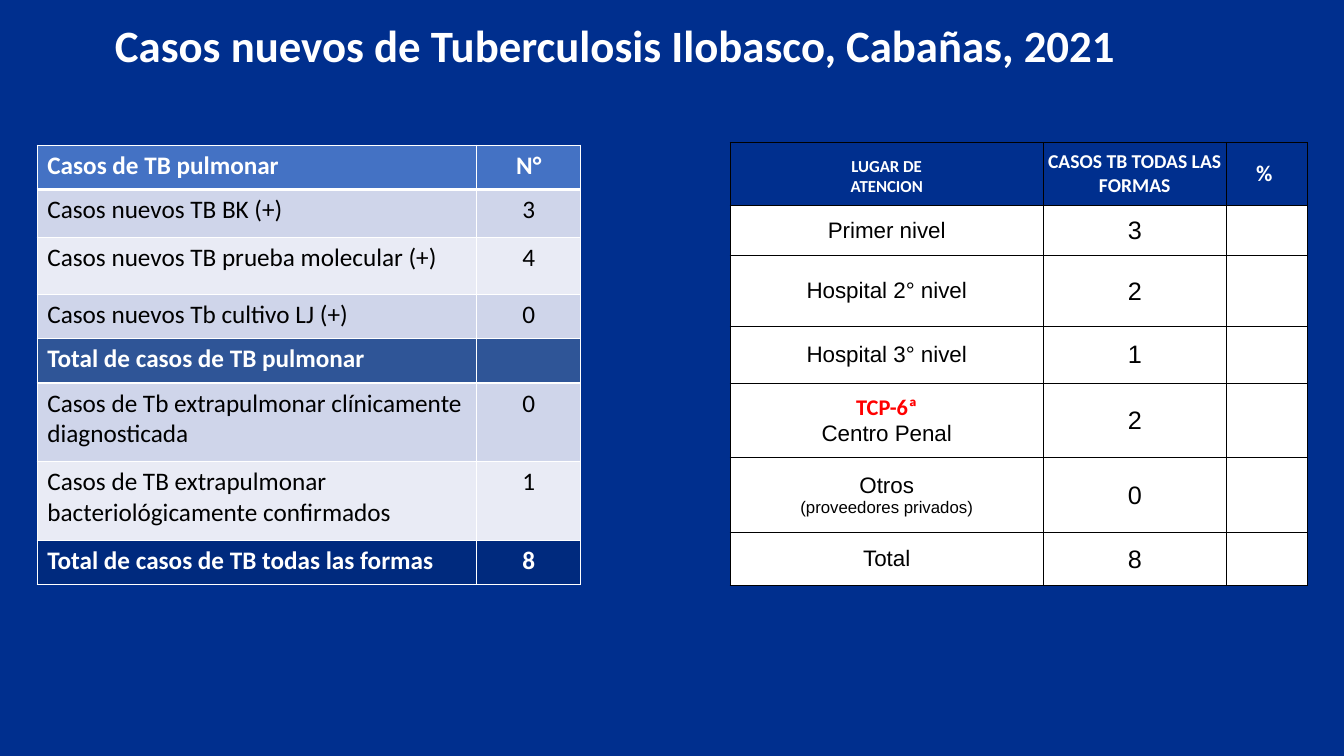
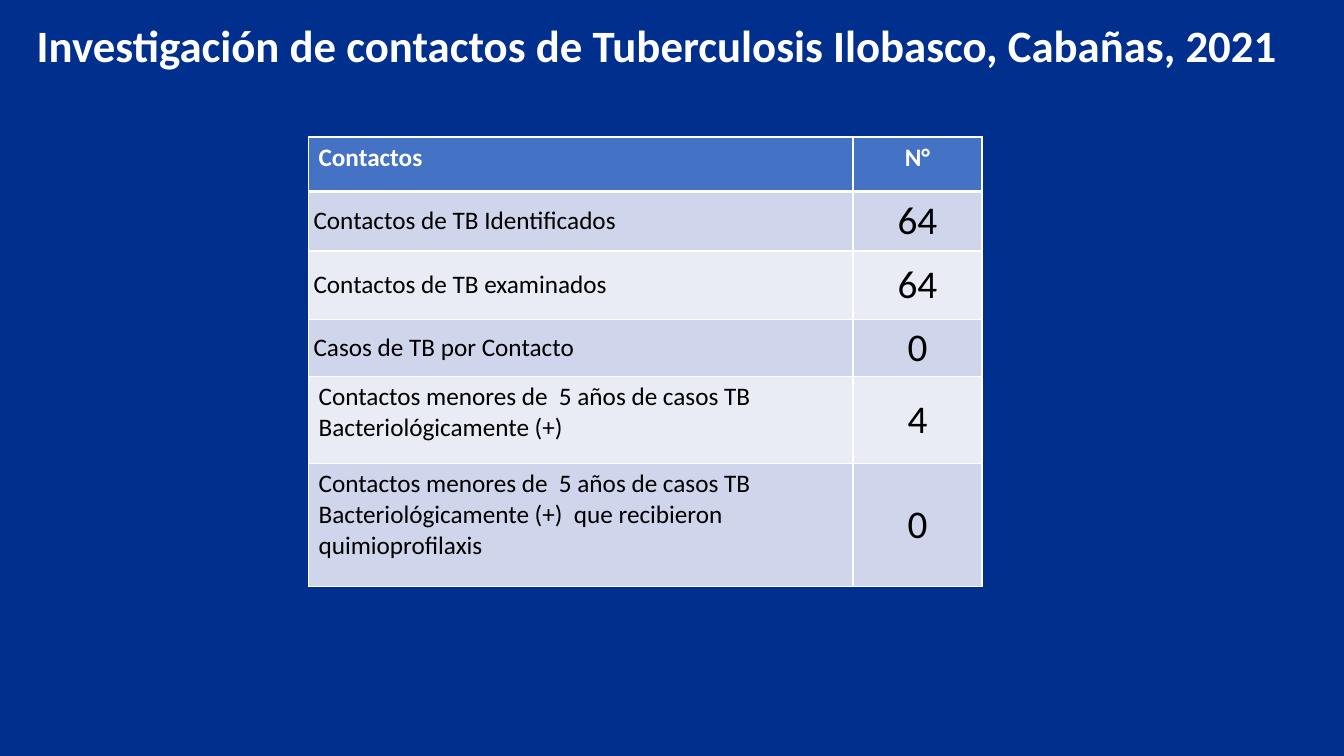
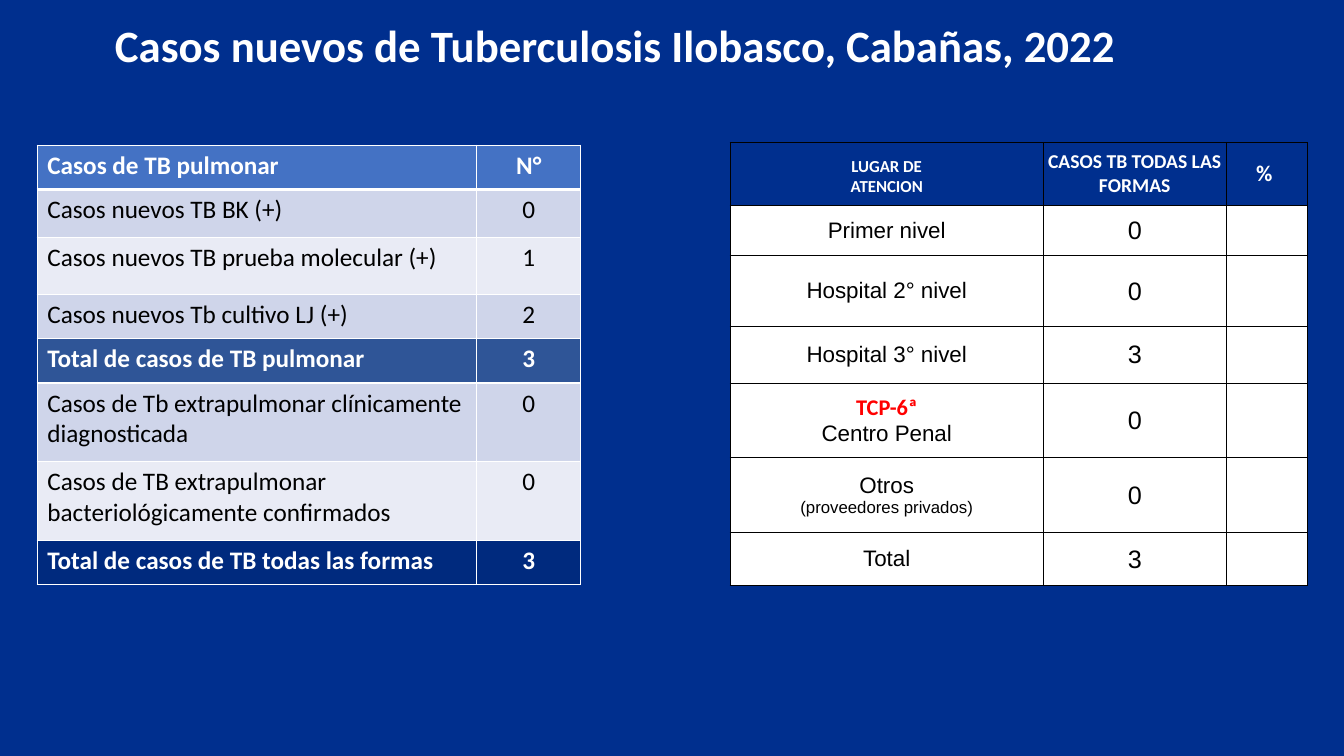
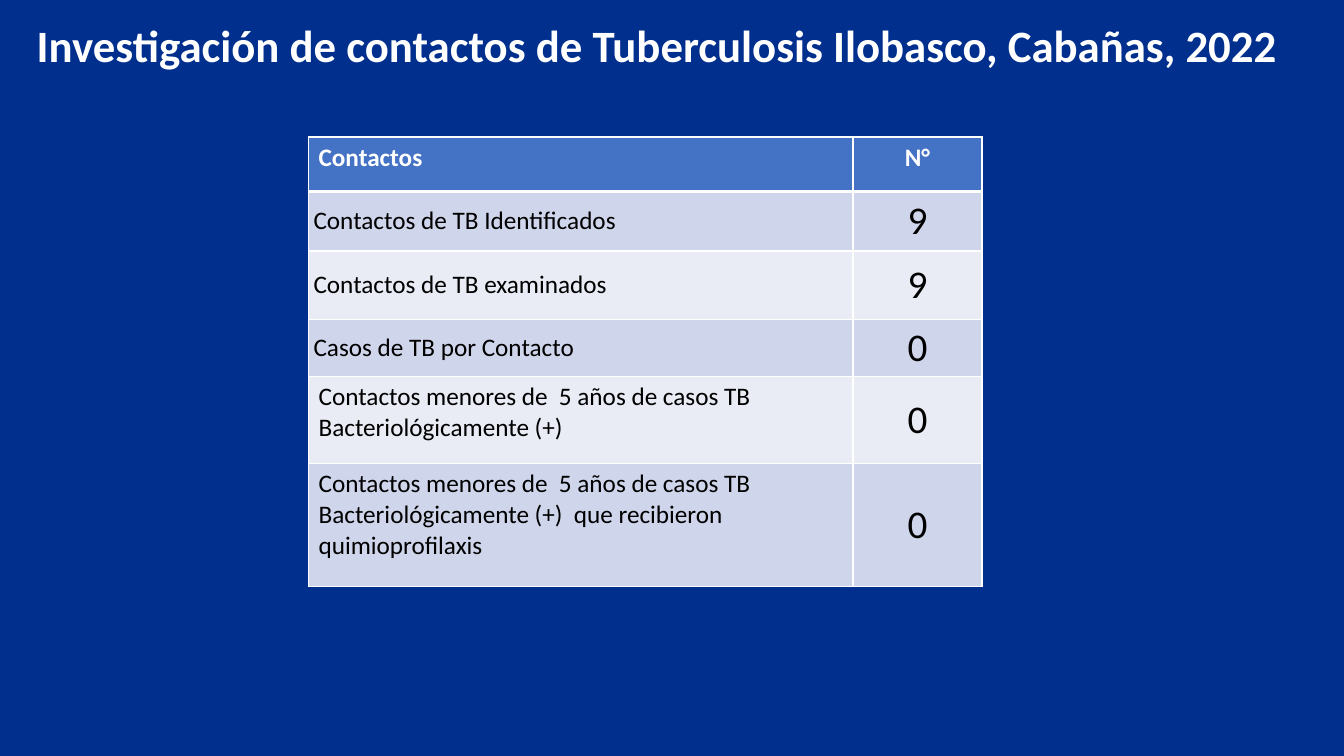
import dataclasses

import lxml.etree
import pptx
import pptx.dml.color
import pptx.enum.text
import pptx.oxml.ns
import pptx.util

Inches = pptx.util.Inches
Pt = pptx.util.Pt
ALIGN = pptx.enum.text.PP_ALIGN
ANCHOR = pptx.enum.text.MSO_ANCHOR


@dataclasses.dataclass(frozen=True)
class Theme:
    """Colours, fonts and type sizes of the whole deck."""
    navy: str = "002F8E"
    deep_navy: str = "002A7E"
    steel: str = "2F5597"
    header: str = "4472C4"
    band_dark: str = "CFD5EA"
    band_light: str = "E9EBF5"
    white: str = "FFFFFF"
    black: str = "000000"
    red: str = "FF0000"
    font: str = "Calibri"
    place_font: str = "Arial"
    title: int = 32
    figure: int = 28
    body: int = 18
    place: int = 16
    column_head: int = 14
    small: int = 12


THEME = Theme()


@dataclasses.dataclass(frozen=True)
class Style:
    """Look of a line of text."""
    size: int = THEME.body
    color: str = THEME.black
    bold: bool = False
    font: str = THEME.font


@dataclasses.dataclass(frozen=True)
class Cell:
    """Content of a table cell: one (text, style) pair per paragraph."""
    lines: tuple
    fill: str
    align: ALIGN = ALIGN.CENTER
    anchor: ANCHOR = ANCHOR.MIDDLE
    margins: tuple = (0.1, 0.05, 0.1, 0.05)


BODY = Style()
STRONG = Style(color=THEME.white, bold=True)
TIGHT = (0, 0, 0, 0)


def rgb(color):
    return pptx.dml.color.RGBColor.from_string(color)


class Report:
    """Holds the deck, its theme and the current page."""

    def __init__(self, theme):
        self.theme = theme
        self.deck = pptx.Presentation()
        self.deck.slide_width = Inches(13.33)
        self.deck.slide_height = Inches(7.5)
        background = self.deck.slide_master.background.fill
        background.solid()
        background.fore_color.rgb = rgb(theme.navy)
        self.page = None

    def add_page(self, title, left, width):
        self.page = self.deck.slides.add_slide(self.deck.slide_layouts[6])
        box = self.page.shapes.add_textbox(
            Inches(left), Inches(0.13), Inches(width), Inches(0.64))
        box.text_frame.word_wrap = True
        style = Style(self.theme.title, self.theme.white, True)
        self.set_lines(box.text_frame, [(title, style)], ALIGN.CENTER)

    def set_lines(self, frame, lines, align):
        frame.text = "\n".join(text for text, _ in lines)
        for para, (_, style) in zip(frame.paragraphs, lines):
            para.alignment = align
            for span in para.runs:
                span.font.name = style.font
                span.font.size = Pt(style.size)
                span.font.bold = style.bold
                span.font.color.rgb = rgb(style.color)

    def add_table(self, left, top, widths, heights, rows, line, line_width,
                  head_line_width):
        table = self.page.shapes.add_table(
            len(heights), len(widths), Inches(left), Inches(top),
            Inches(sum(widths)), Inches(sum(heights))).table
        table.first_row = table.horz_banding = False
        for column, width in zip(table.columns, widths):
            column.width = Inches(width)
        for index, (height, row) in enumerate(zip(heights, rows)):
            table.rows[index].height = Inches(height)
            # The rule under the heading is shared by the first two rows
            edges = {side: line_width for side in "LRTB"}
            if index < 2:
                edges["BT"[index]] = head_line_width
            for target, cell in zip(table.rows[index].cells, row):
                self.fill_cell(target, cell)
                self.draw_borders(target, line, edges)

    def fill_cell(self, target, cell):
        target.fill.solid()
        target.fill.fore_color.rgb = rgb(cell.fill)
        target.vertical_anchor = cell.anchor
        (target.margin_left, target.margin_top,
         target.margin_right, target.margin_bottom) = map(Inches, cell.margins)
        self.set_lines(target.text_frame, cell.lines, cell.align)

    def draw_borders(self, target, color, edges):
        qn = pptx.oxml.ns.qn
        properties = target._tc.get_or_add_tcPr()
        for position, (side, width) in enumerate(edges.items()):
            border = lxml.etree.Element(qn("a:ln" + side), w=str(Pt(width)))
            solid = lxml.etree.SubElement(border, qn("a:solidFill"))
            lxml.etree.SubElement(solid, qn("a:srgbClr"), val=color)
            properties.insert(position, border)

    # Tables of the report
    def add_case_table(self, values):
        theme = self.theme
        entries = [
            ("Casos de TB pulmonar", theme.header, STRONG),
            ("Casos nuevos TB BK (+)", theme.band_dark, BODY),
            ("Casos nuevos TB prueba molecular (+)", theme.band_light, BODY),
            ("Casos nuevos Tb cultivo LJ (+)", theme.band_dark, BODY),
            ("Total de casos de TB pulmonar", theme.steel, STRONG),
            ("Casos de Tb extrapulmonar clínicamente diagnosticada",
             theme.band_dark, BODY),
            ("Casos de TB extrapulmonar bacteriológicamente confirmados",
             theme.band_light, BODY),
            ("Total de casos de TB todas las formas", theme.deep_navy, STRONG),
        ]
        rows = [
            (Cell(((label, style),), fill, ALIGN.LEFT, ANCHOR.TOP),
             Cell(((value, style),), fill, anchor=ANCHOR.TOP))
            for (label, fill, style), value in zip(entries, ["N°"] + values)]
        self.add_table(0.37, 1.44, [4.36, 1.03],
                       [0.44, 0.48, 0.56, 0.44, 0.44, 0.78, 0.78, 0.44],
                       rows, theme.white, 1, 3)

    def add_place_table(self, values):
        theme = self.theme
        place = Style(theme.place, font=theme.place_font)
        note = Style(theme.small, font=theme.place_font)
        count = Style(theme.body, font=theme.place_font)
        alert = Style(theme.place, theme.red, True)
        small_head, column_head, place_head = (
            Style(size, theme.white, True)
            for size in (theme.small, theme.column_head, theme.place))
        places = [
            (("Primer nivel", place),),
            (("Hospital 2° nivel", place),),
            (("Hospital 3° nivel", place),),
            (("TCP-6ª", alert), ("Centro Penal", place)),
            (("Otros", place), ("(proveedores privados)", note)),
            (("Total", place),),
        ]
        rows = [(
            Cell((("LUGAR DE", small_head), ("ATENCION", small_head)),
                 theme.navy, margins=(0, 0.06, 0, 0)),
            Cell((("CASOS TB TODAS LAS FORMAS", column_head),),
                 theme.navy, margins=TIGHT),
            Cell((("%", place_head),), theme.navy, margins=(0, 0, 0.05, 0)),
        )]
        for lines, value in zip(places, values):
            rows.append((
                Cell(lines, theme.white, margins=TIGHT),
                Cell(((value, count),), theme.white,
                     margins=(0.01, 0.01, 0.01, 0)),
                Cell((), theme.white)))
        self.add_table(7.24, 1.41, [3.11, 1.81, 0.81],
                       [0.63, 0.49, 0.71, 0.56, 0.74, 0.74, 0.53],
                       rows, theme.black, 0.5, 0.5)

    def add_contact_table(self, values):
        theme = self.theme
        figure = Style(theme.figure)
        short_labels = ["Contactos de TB Identificados",
                        "Contactos de TB examinados",
                        "Casos de TB por Contacto"]
        long_labels = [
            "Contactos menores de  5 años de casos TB Bacteriológicamente (+)",
            "Contactos menores de  5 años de casos TB Bacteriológicamente (+)"
            "  que recibieron quimioprofilaxis"]
        rows = [(
            Cell((("Contactos", STRONG),), theme.header, ALIGN.LEFT,
                 ANCHOR.TOP),
            Cell((("N°", STRONG),), theme.header, anchor=ANCHOR.TOP))]
        for index, label in enumerate(short_labels + long_labels):
            fill = theme.band_light if index % 2 else theme.band_dark
            if label in short_labels:
                layout = {"margins": (0.05, 0, 0, 0)}
            else:
                layout = {"anchor": ANCHOR.TOP}
            rows.append((
                Cell(((label, BODY),), fill, ALIGN.LEFT, **layout),
                Cell(((values[index], figure),), fill)))
        self.add_table(3.06, 1.36, [5.4, 1.28],
                       [0.54, 0.59, 0.68, 0.57, 0.86, 1.22],
                       rows, theme.white, 1, 3)


# Figures of each year: cases, places of care, contacts
YEARS = {
    2021: (["3", "4", "0", "", "0", "1", "8"],
           ["3", "2", "1", "2", "0", "8"],
           ["64", "64", "0", "4", "0"]),
    2022: (["0", "1", "2", "3", "0", "0", "3"],
           ["0", "0", "3", "0", "0", "3"],
           ["9", "9", "0", "0", "0"]),
}


def main():
    report = Report(THEME)
    for year, (cases, places, contacts) in YEARS.items():
        report.add_page(
            f"Casos nuevos de Tuberculosis Ilobasco, Cabañas, {year}",
            -0.56, 13.33)
        report.add_case_table(cases)
        report.add_place_table(places)
        report.add_page(
            "Investigación de contactos de Tuberculosis Ilobasco, "
            f"Cabañas, {year}", 0, 13.04)
        report.add_contact_table(contacts)
    report.deck.save("out.pptx")


if __name__ == "__main__":
    main()
